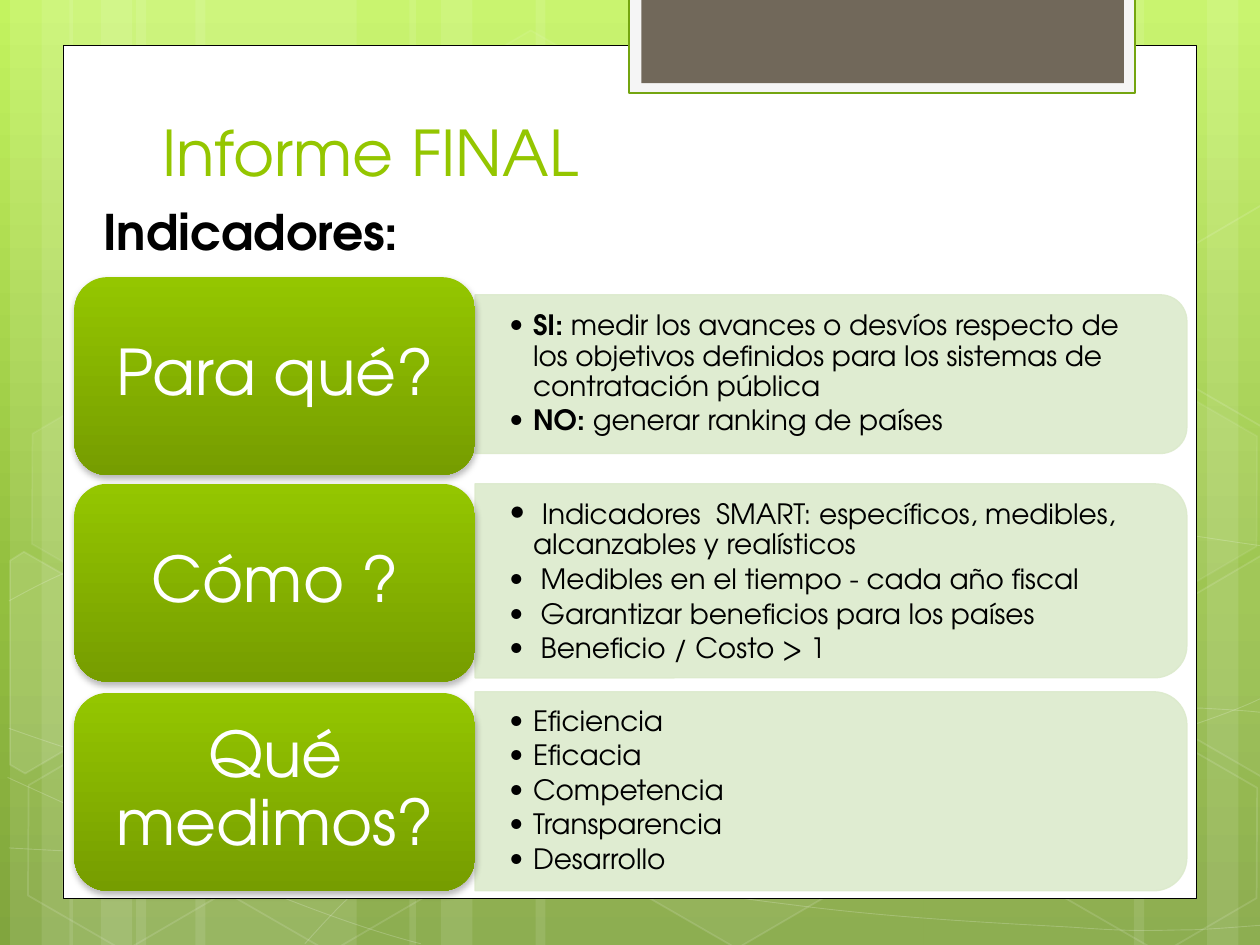
from copy import deepcopy

from lxml import etree
from pptx import Presentation
from pptx import util as u
from pptx.dml.color import RGBColor
from pptx.enum import shapes, text
from pptx.oxml import ns

CELL = u.Inches(1)
COLUMNS, ROWS = 10, 7.5
FONT = "TeX Gyre Adventor"
WHITE, BLACK, GREEN, DARK_GREEN, PALE = "FFFFFF", "000000", "94C600", "769D00", "DCEACC"

BEAMS = [(1.08, 1.75), (0.08, 0.5), (0.33, 0.83), (1.55, 1.75), (0.55, 0.5), (0.8, 0.83),
         (7.33, 1.75), (9.58, 0.5), (9, 0.83), (4.25, 3.08), (3.25, 0.5), (3.5, 0.83)]
CURVES = [
    [(0.07, 6.73), (0.61, 6.76), (1.15, 6.79), (1.9, 6.78), (2.65, 6.77), (3.58, 6.75), (4.58, 6.65),
     (5.58, 6.55), (7, 6.36), (7.92, 6.17), (8.83, 5.98), (9.77, 5.68), (10.07, 5.51)],
    [(0.07, 4.77), (0.36, 4.61), (0.65, 4.46), (1.21, 4.31), (1.78, 4.16), (2.59, 3.94), (3.47, 3.87),
     (4.36, 3.8), (5.44, 3.79), (6.54, 3.87), (7.64, 3.95), (9.47, 4.26), (10.07, 4.34)],
    [(0.06, 6.17), (1.27, 6.72), (2.47, 7.27), (3.34, 7.49)],
    [(0.07, 5.78), (0.38, 5.89), (0.7, 6), (1.28, 6.16), (1.86, 6.31), (2.73, 6.56), (3.57, 6.73),
     (4.4, 6.9), (5.45, 7.08), (6.28, 7.18), (7.11, 7.29), (8, 7.33), (8.53, 7.36),
     (9.05, 7.4), (9.19, 7.38), (9.45, 7.38), (9.71, 7.37), (9.89, 7.35), (10.07, 7.34)],
    [(2.42, 7.49), (2.6, 7.29), (2.78, 7.09), (3.02, 6.91), (3.26, 6.73), (3.6, 6.53), (3.88, 6.39),
     (4.16, 6.25), (4.33, 6.19), (4.7, 6.09), (5.06, 5.99), (5.73, 5.85), (6.08, 5.78),
     (6.44, 5.71), (6.49, 5.71), (6.8, 5.69), (7.11, 5.66), (7.6, 5.63), (7.94, 5.62),
     (8.29, 5.61), (8.86, 5.62), (8.86, 5.62), (9.08, 5.62), (9.3, 5.62), (9.53, 5.62),
     (9.71, 5.63), (9.88, 5.64), (9.97, 5.65), (10.06, 5.66), (10.03, 5.65), (10.06, 5.66)],
]
HEXAGONS = [(3.34, 0.36, 4, 8), (4.97, 5.89, 6, 12), (0.11, 5.91, 0, 12), (0.14, 3.12, 7, 8),
            (1.74, 5.92, 0, 12), (7.53, 4.53, 10, 12), (8.34, 5.93, 0, 12), (8.34, 3.14, 7, 8)]
CUT_HEXAGONS = [
    ([(0.08, 4.45), (0.19, 4.38), (0.96, 4.82), (0.95, 5.7), (0.2, 6.14), (0.08, 6.07)], 10),
    ([(9.26, 4.85), (10.01, 4.41), (10.09, 4.46), (10.09, 6.13), (10.02, 6.17), (9.26, 5.73)], 4),
    ([(9.26, 2.07), (10.01, 1.63), (10.1, 1.68), (10.09, 3.35), (10.02, 3.39), (9.26, 2.95)], 0),
]
TOPICS = [
    (2.2, "Para qué?", 2.97, 1.26, [
        [("SI:", True, 16),
         (" medir los avances o desvíos respecto de los objetivos definidos para los sistemas de "
          "contratación pública", False, 16)],
        [("NO: ", True, 16), ("generar ranking de países", False, 16)]]),
    (3.84, "Cómo ?", 4.61, 1.54, [
        [(" ", False, 18),
         ("Indicadores  SMART: específicos, medibles, alcanzables y realísticos", False, 16)],
        [(" Medibles en el tiempo - cada año fiscal", False, 16)],
        [(" Garantizar beneficios para los países", False, 16)],
        [(" Beneficio / Costo > 1", False, 16)]]),
    (5.5, "Qué medimos?", 6.28, 1.58, [
        [(word, False, 16)]
        for word in ("Eficiencia", "Eficacia", "Competencia", "Transparencia", "Desarrollo")]),
]


def color(value):
    """Turn a hex string into a colour."""
    return RGBColor.from_string(value)


def add_xml(parent, tag, **attributes):
    """Append a drawing element with its attributes."""
    return etree.SubElement(parent, ns.qn(tag), {key: str(value) for key, value in attributes.items()})


def paint(shape, fill=None, fill_alpha=100, line=None, width=1, line_alpha=100):
    """Set fill and line with their opacity in percent, and drop the shadow."""
    shape.shadow.inherit = False
    properties = shape.element.spPr
    for target, value, alpha, query in (
            (shape.fill, fill, fill_alpha, "a:solidFill/a:srgbClr"),
            (shape.line.fill, line, line_alpha, "a:ln/a:solidFill/a:srgbClr")):
        if value is None:
            target.background()
            continue
        target.solid()
        target.fore_color.rgb = color(value)
        if alpha < 100:
            add_xml(properties.xpath(query)[0], "a:alpha", val=alpha * 1000)
    if line:
        shape.line.width = u.Pt(width)
    return shape


def blend(fill, first, last):
    """Fill from top to bottom between two colours."""
    fill.gradient()
    fill.gradient_angle = 270
    for stop, value, position in zip(fill.gradient_stops, (first, last), (0, 1)):
        stop.color.rgb = color(value)
        stop.position = position


def add_box(slide, kind, box):
    """Add a preset shape in a box of grid cells."""
    return slide.shapes.add_shape(kind, *(u.Emu(round(side * CELL)) for side in box))


def add_outline(slide, points, closed):
    """Add a freeform through grid points."""
    first, *rest = [(x * CELL, y * CELL) for x, y in points]
    builder = slide.shapes.build_freeform(*first)
    builder.add_line_segments(rest, close=closed)
    return builder.convert_to_shape()


def add_curve(slide, controls):
    """Add an open chain of cubic curves through its control points."""
    shape = add_outline(slide, controls, False)
    segments = shape.element.spPr.xpath(".//a:path/a:lnTo")
    for start in range(0, len(segments), 3):
        curve = add_xml(segments[start].getparent(), "a:cubicBezTo")
        for segment in segments[start:start + 3]:
            curve.append(segment[0])
            segment.getparent().remove(segment)
    return shape


def add_text_box(slide, box, anchor, side=0.1, edge=0.05):
    """Add an empty text box with margins in cells and return its frame."""
    frame = slide.shapes.add_textbox(*(u.Emu(round(value * CELL)) for value in box)).text_frame
    frame.word_wrap = True
    frame.vertical_anchor = anchor
    frame.margin_left = frame.margin_right = round(side * CELL)
    frame.margin_top = frame.margin_bottom = round(edge * CELL)
    return frame


def add_run(paragraph, words, size, value, bold=False):
    """Add one run to a paragraph."""
    run = paragraph.add_run()
    run.text = words
    run.font.name, run.font.size, run.font.bold = FONT, u.Pt(size), bold
    run.font.color.rgb = color(value)


def space_paragraph(paragraph, after):
    """Tighten the lines and set the gap after, in percent."""
    paragraph.line_spacing = 0.9
    properties = paragraph._p.get_or_add_pPr()
    add_xml(add_xml(properties, "a:spcAft"), "a:spcPct", val=after * 1000)
    return properties


def add_backdrop(slide):
    """Draw the green background with beams, curves and hexagons."""
    blend(slide.background.fill, "C3F35F", "81A53E")
    stops = slide.element.xpath(".//p:bg//a:gsLst")[0]
    stops.insert(1, deepcopy(stops[0]))
    middle = slide.background.fill.gradient_stops[1]
    middle.position, middle.color.rgb = 0.62, color("93BF3F")
    for left, width in BEAMS:
        beam = add_box(slide, shapes.MSO_SHAPE.RECTANGLE, (left, 0, width, ROWS))
        paint(beam, WHITE, 10)
    for controls in CURVES:
        paint(add_curve(slide, controls), line=WHITE, width=0.5, line_alpha=20)
    for left, top, fill_alpha, line_alpha in HEXAGONS:
        hexagon = add_box(slide, shapes.MSO_SHAPE.HEXAGON, (left, top, 1.75, 1.52))
        hexagon.adjustments[0] = 0.285
        hexagon.rotation = 30
        paint(hexagon, WHITE if fill_alpha else None, fill_alpha, WHITE, 1, line_alpha)
    for points, alpha in CUT_HEXAGONS:
        paint(add_outline(slide, points, True), WHITE if alpha else None, alpha, WHITE, 1, 12)


def add_page(slide, box):
    """Draw the white page and the tab at its top."""
    left, top, width, height = box
    rectangle = shapes.MSO_SHAPE.RECTANGLE
    paint(add_box(slide, rectangle, box), WHITE, line=BLACK, width=0.5)
    tab = (left + 4.49, top - 0.38, 4.02, 0.76)
    paint(add_box(slide, rectangle, tab), "F5F5F5", line="74A510", width=1.25)
    paint(add_box(slide, rectangle, (tab[0] + 0.1, tab[1], 3.83, 0.68)), "71685A")


def add_heading(slide, box, words, size, value, bold, anchor):
    """Write one line of heading."""
    frame = add_text_box(slide, box, anchor)
    add_run(frame.paragraphs[0], words, size, value, bold)


def add_panel(slide, box, items):
    """Draw a pale panel, rounded at its right, with bullets."""
    left, top, width, height = box
    upright = (left + (width - height) / 2, top + (height - width) / 2, height, width)
    panel = add_box(slide, shapes.MSO_SHAPE.ROUND_2_SAME_RECTANGLE, upright)
    panel.rotation = 90
    paint(panel, PALE, 90, PALE, 0.75, 90)
    frame = add_text_box(slide, (left, top + 0.07, width - 0.07, height - 0.14),
                         text.MSO_ANCHOR.MIDDLE, 0.27, 0.14)
    indent = round(0.19 * CELL)
    for index, runs in enumerate(items):
        paragraph = frame.add_paragraph() if index else frame.paragraphs[0]
        paragraph.level = 1
        properties = space_paragraph(paragraph, 15)
        properties.set("marL", str(indent))
        properties.set("indent", str(-indent))
        add_xml(properties, "a:buFont", typeface=FONT)
        add_xml(properties, "a:buChar", char="•")
        for words, bold, size in runs:
            add_run(paragraph, words, size, BLACK, bold)


def add_button(slide, box, name):
    """Draw a green button with its name."""
    left, top, width, height = box
    button = paint(add_box(slide, shapes.MSO_SHAPE.ROUNDED_RECTANGLE, box))
    blend(button.fill, GREEN, DARK_GREEN)
    shadow = add_xml(button.element.spPr.xpath("a:effectLst")[0], "a:outerShdw",
                     blurRad=u.Pt(4), dist=u.Pt(2), dir=5400000, rotWithShape=0)
    add_xml(add_xml(shadow, "a:srgbClr", val=BLACK), "a:alpha", val=28000)
    inner = (left + 0.08, top + 0.07, width - 0.15, height - 0.15)
    label = add_text_box(slide, inner, text.MSO_ANCHOR.MIDDLE, 0.15, 0.07).paragraphs[0]
    label.alignment = text.PP_ALIGN.CENTER
    space_paragraph(label, 35)
    add_run(label, name, 36, WHITE)


def main():
    """Build the slide and save it."""
    presentation = Presentation()
    presentation.slide_width, presentation.slide_height = round(COLUMNS * CELL), round(ROWS * CELL)
    slide = presentation.slides.add_slide(presentation.slide_layouts[6])
    add_backdrop(slide)
    add_page(slide, (0.5, 0.36, 9, 6.77))
    add_heading(slide, (1.19, 0.3, 7.95, 1.25), "Informe FINAL", 36, GREEN, False, text.MSO_ANCHOR.BOTTOM)
    for top, name, middle, height, items in TOPICS:
        add_panel(slide, (3.77, middle - height / 2, 5.65, height), items)
        add_button(slide, (0.59, top, 3.18, 1.57), name)
    add_heading(slide, (0.72, 1.55, 3.43, 0.57), "Indicadores:", 28, BLACK, True, text.MSO_ANCHOR.TOP)
    presentation.save("out.pptx")


if __name__ == "__main__":
    main()
